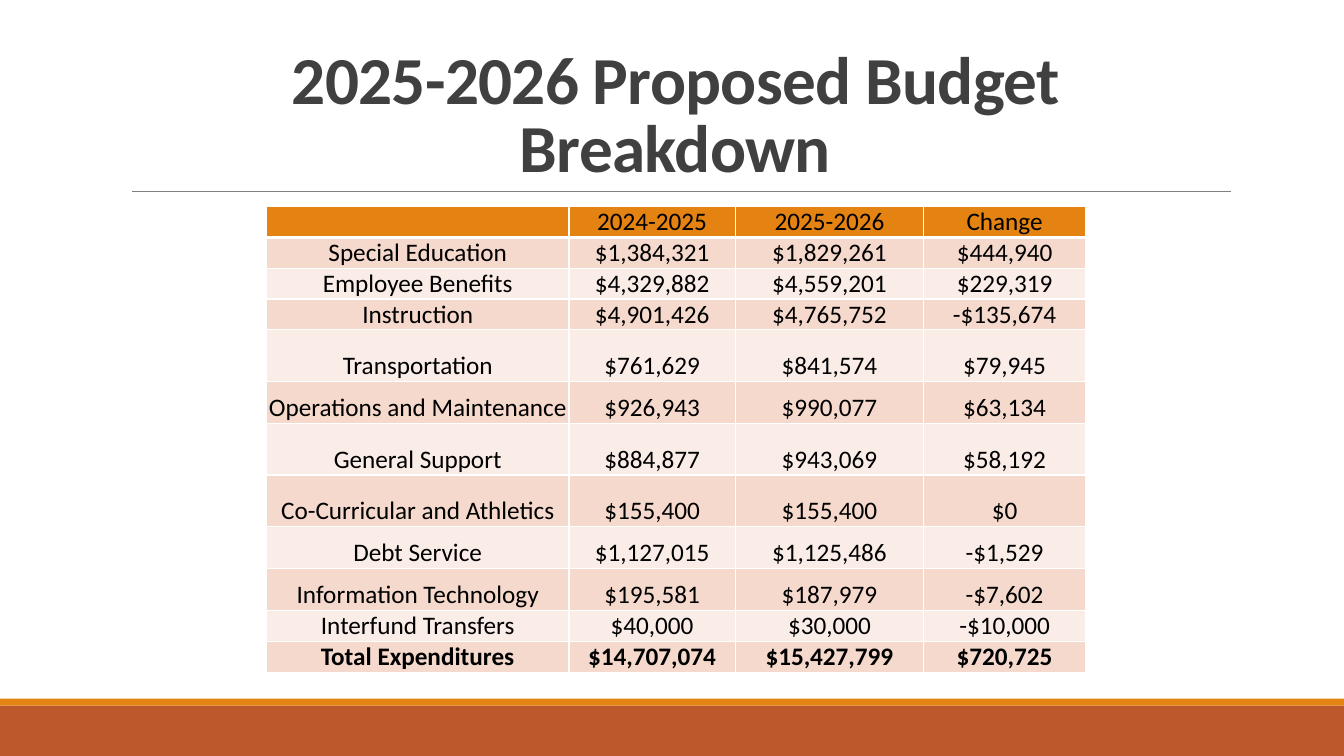
from lxml import etree
from pptx import Presentation, util as u
from pptx.dml.color import RGBColor
from pptx.enum import shapes, text
from pptx.oxml import ns

ROWS = [
    ("", "2024-2025", "2025-2026", "Change"),
    ("Special Education", "$1,384,321", "$1,829,261", "$444,940"),
    ("Employee Benefits", "$4,329,882", "$4,559,201", "$229,319"),
    ("Instruction", "$4,901,426", "$4,765,752", "-$135,674"),
    ("Transportation", "$761,629", "$841,574", "$79,945"),
    ("Operations and Maintenance", "$926,943", "$990,077", "$63,134"),
    ("General Support", "$884,877", "$943,069", "$58,192"),
    ("Co-Curricular and Athletics", "$155,400", "$155,400", "$0"),
    ("Debt Service", "$1,127,015", "$1,125,486", "-$1,529"),
    ("Information Technology", "$195,581", "$187,979", "-$7,602"),
    ("Interfund Transfers", "$40,000", "$30,000", "-$10,000"),
    ("Total Expenditures", "$14,707,074", "$15,427,799", "$720,725"),
]
WIDTHS = [216, 118.8, 134.6, 115.6]
LOW, MID, TALL = 20.2, 30, 36.9
HEIGHTS = [LOW] * 4 + [TALL, MID, TALL, TALL, MID, MID, LOW, LOW]


def color(code):
    """Turn a hex string into a colour."""
    return RGBColor.from_string(code)


class Page:
    """Hold the style and the current slide."""

    font = "Calibri"
    ink, dark, white, gray = "000000", "404040", "FFFFFF", "808080"
    rust, gold = "BD582C", "E48312"
    bands = ["FAEDE7", "F5D9CC"]

    def __init__(self, deck):
        """Add a slide that has only a title."""
        self.slide = deck.slides.add_slide(deck.slide_layouts[5])

    def label(self, par, words, size, code, bold=False):
        """Add one centred run."""
        par.alignment = text.PP_ALIGN.CENTER
        run = par.add_run()
        run.text = words
        run.font.name = self.font
        run.font.size = u.Pt(size)
        run.font.bold = bold
        run.font.color.rgb = color(code)
        return run

    def title(self, words, left, top, width, height):
        """Place and fill the title."""
        box = self.slide.shapes.title
        box.left, box.top = u.Pt(left), u.Pt(top)
        box.width, box.height = u.Pt(width), u.Pt(height)
        frame = box.text_frame
        frame.word_wrap = True
        frame.auto_size = text.MSO_AUTO_SIZE.NONE
        frame.vertical_anchor = text.MSO_ANCHOR.BOTTOM
        par = frame.paragraphs[0]
        par.line_spacing = 0.85
        run = self.label(par, words, 48, self.dark, True)
        run.font._element.set("spc", "-50")

    def band(self, left, top, width, height, code):
        """Draw a plain filled bar."""
        bar = self.slide.shapes.add_shape(
            shapes.MSO_SHAPE.RECTANGLE, *map(u.Pt, (left, top, width, height)))
        bar.shadow.inherit = False
        bar.fill.solid()
        bar.fill.fore_color.rgb = color(code)
        bar.line.fill.background()

    def rule(self, left, top, right):
        """Draw a thin level line."""
        line = self.slide.shapes.add_connector(
            shapes.MSO_CONNECTOR.STRAIGHT, *map(u.Pt, (left, top, right, top)))
        line.line.color.rgb = color(self.gray)
        line.line.width = u.Pt(0.5)
        etree.SubElement(line._element.spPr, ns.qn("a:effectLst"))

    def edge(self, cell, top, base):
        """Give a cell its white borders."""
        props = cell._tc.get_or_add_tcPr()
        sides = {"lnL": 1, "lnR": 1, "lnT": top, "lnB": base}
        for spot, (side, wide) in enumerate(sides.items()):
            line = etree.Element(ns.qn("a:" + side), w=str(u.Pt(wide)))
            fill = etree.SubElement(line, ns.qn("a:solidFill"))
            etree.SubElement(fill, ns.qn("a:srgbClr"), val=self.white)
            props.insert(spot, line)

    def cell(self, cell, words, row, last):
        """Fill and style one table cell."""
        cell.margin_left = cell.margin_right = 0
        cell.margin_top = cell.margin_bottom = 0
        cell.vertical_anchor = text.MSO_ANCHOR.BOTTOM
        cell.fill.solid()
        cell.fill.fore_color.rgb = color(self.bands[row % 2] if row else self.gold)
        self.edge(cell, 3 if row == 1 else 1, 1 if row else 3)
        if words:
            par = cell.text_frame.paragraphs[0]
            self.label(par, words, 18, self.ink, last)

    def table(self, rows, left, top, widths, heights):
        """Build the table with a bold last row."""
        frame = self.slide.shapes.add_table(
            len(rows), len(widths),
            *map(u.Pt, (left, top, sum(widths), sum(heights))))
        grid = frame.table
        grid.first_row = grid.horz_banding = False
        for col, width in zip(grid.columns, widths):
            col.width = u.Pt(width)
        for row, (items, height) in enumerate(zip(rows, heights)):
            grid.rows[row].height = u.Pt(height)
            for col, words in enumerate(items):
                self.cell(grid.cell(row, col), words, row, row == len(rows) - 1)


def main():
    """Build the budget slide and save it."""
    deck = Presentation()
    deck.slide_width, deck.slide_height = u.Pt(960), u.Pt(540)
    page = Page(deck)
    page.band(0, 504, 960, 36, page.rust)
    page.band(0, 499, 960, 5, page.gold)
    page.rule(94.3, 136.8, 879)
    page.title("2025-2026 Proposed Budget Breakdown", 86.4, 22.5, 792, 114.3)
    page.table(ROWS, 190.4, 147.6, WIDTHS, HEIGHTS)
    deck.save("out.pptx")


if __name__ == "__main__":
    main()
